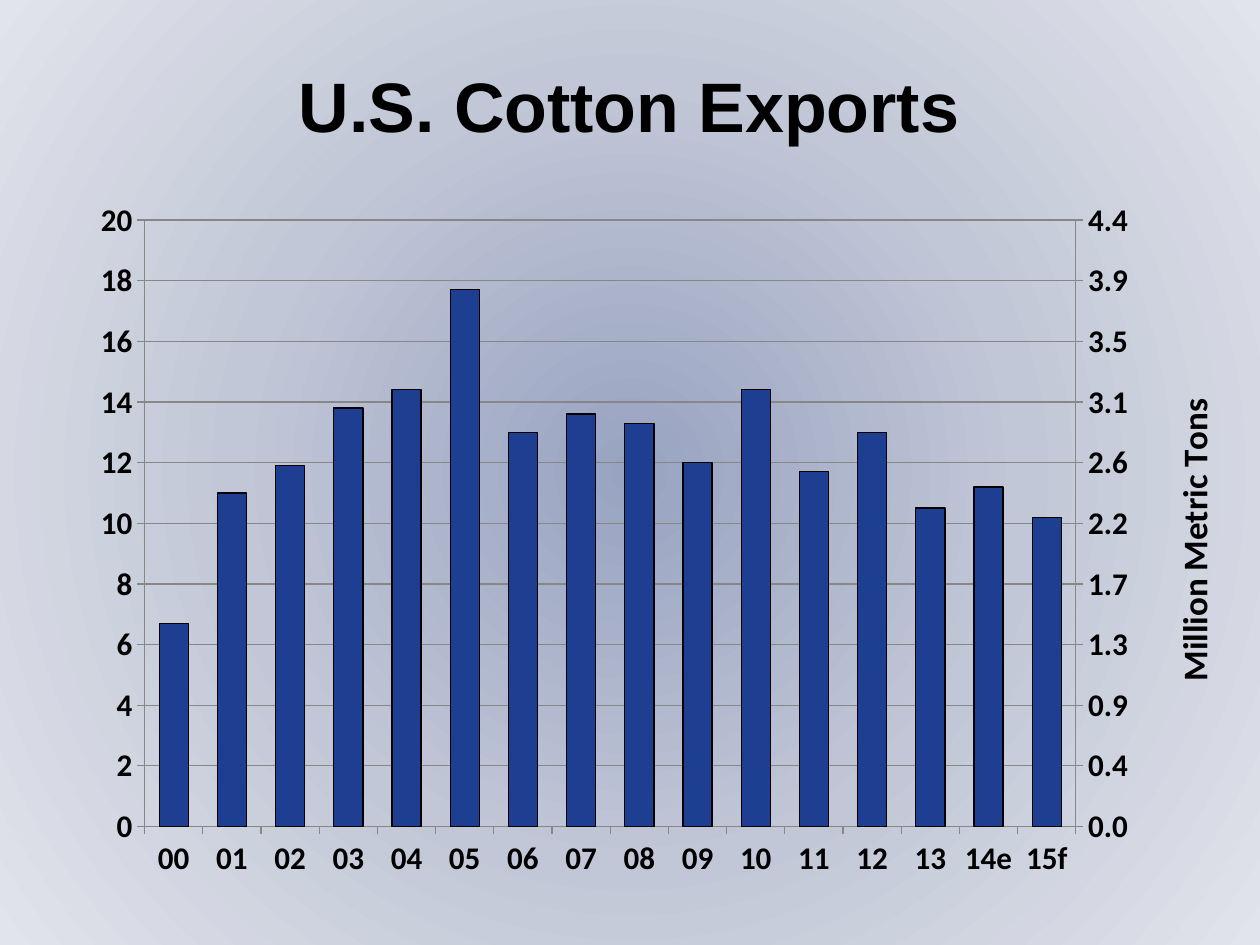
from copy import deepcopy

from pptx import Presentation
from pptx.chart.axis import CategoryAxis, ValueAxis
from pptx.chart.data import CategoryChartData
from pptx.dml.color import RGBColor
from pptx.enum.chart import XL_CHART_TYPE, XL_TICK_LABEL_POSITION, XL_TICK_MARK
from pptx.enum.text import MSO_ANCHOR, PP_ALIGN
from pptx.oxml import parse_xml
from pptx.oxml.ns import nsdecls, qn
from pptx.util import Pt

BLACK = RGBColor(0x00, 0x00, 0x00)
BLUE = RGBColor(0x1E, 0x3E, 0x92)
GRAY = RGBColor(0x87, 0x87, 0x87)
BACKGROUND_STOPS = [
    (0, RGBColor(0x98, 0xA3, 0xC1)),
    (50, RGBColor(0xC2, 0xC7, 0xD7)),
    (100, RGBColor(0xE1, 0xE4, 0xEB)),
]
YEARS = [f"{year:02}" for year in range(14)] + ["14e", "15f"]
BALES = [6.7, 11, 11.9, 13.8, 14.4, 17.7, 13, 13.6, 13.3, 12, 14.4, 11.7, 13, 10.5, 11.2, 10.2]
TONS = [1.5, 2.4, 2.6, 3, 3.1, 3.9, 2.8, 3, 2.9, 2.6, 3.1, 2.6, 2.8, 2.3, 2.5, 2.2]
TONS_MAXIMUM = 4.357298


class SlideBuilder:
    """Holds the style and the current slide, and adds each kind of element."""

    heading_font = "Arial"
    chart_font = "Calibri"

    def __init__(self, slide):
        self.slide = slide

    def style_font(self, font, name, size):
        font.name, font.size, font.bold = name, Pt(size), True
        font.color.rgb = BLACK

    def background(self, stops):
        self.slide.background.fill.gradient()
        gradient = self.slide.element.find(f".//{qn('a:gradFill')}")
        stop_xml = "".join(
            f'<a:gs pos="{position * 1000}"><a:srgbClr val="{color}"/></a:gs>'
            for position, color in stops
        )
        gradient.getparent().replace(gradient, parse_xml(
            f'<a:gradFill {nsdecls("a")} rotWithShape="1"><a:gsLst>{stop_xml}</a:gsLst>'
            '<a:path path="circle"><a:fillToRect l="50000" t="50000" r="50000" b="50000"/>'
            "</a:path></a:gradFill>"
        ))

    def heading(self, text, left, top, width, height):
        shape = self.slide.shapes.add_textbox(Pt(left), Pt(top), Pt(width), Pt(height))
        frame = shape.text_frame
        frame.word_wrap = True
        frame.vertical_anchor = MSO_ANCHOR.MIDDLE
        paragraph = frame.paragraphs[0]
        paragraph.text = text
        paragraph.alignment = PP_ALIGN.CENTER
        self.style_font(paragraph.font, self.heading_font, 40)

    def place(self, element, index, **fractions):
        for layout in element.findall(qn("c:layout")):
            element.remove(layout)
        modes = '<c:xMode val="edge"/><c:yMode val="edge"/>'
        target = '<c:layoutTarget val="inner"/>' if "w" in fractions else ""
        values = "".join(f'<c:{key} val="{value}"/>' for key, value in fractions.items())
        element.insert(index, parse_xml(
            f'<c:layout {nsdecls("c")}><c:manualLayout>{target}{modes}{values}'
            "</c:manualLayout></c:layout>"
        ))

    def axis_line(self, axis):
        axis.major_tick_mark = XL_TICK_MARK.OUTSIDE
        axis.minor_tick_mark = XL_TICK_MARK.NONE
        axis.format.line.color.rgb = GRAY
        axis.format.line.width = Pt(0.75)
        self.style_font(axis.tick_labels.font, self.chart_font, 18)

    def value_axis(self, axis, title, maximum, step, number_format, title_x, title_y):
        self.axis_line(axis)
        axis.minimum_scale, axis.maximum_scale, axis.major_unit = 0, maximum, step
        axis.tick_labels.number_format = number_format
        axis.tick_labels.number_format_is_linked = False
        frame = axis.axis_title.text_frame
        frame.text = title
        self.style_font(frame.paragraphs[0].font, self.chart_font, 20)
        title_element = axis.axis_title._element
        body = title_element.find(f".//{qn('a:bodyPr')}")
        body.set("rot", "-5400000")
        body.set("vert", "horz")
        self.place(title_element, 1, x=title_x, y=title_y)

    def split_to_right_axis(self, chart):
        """Move the second series to its own bars and axes, and return the new value axis."""
        left_bars = chart.plots[0]._element
        left_category, left_value = chart.category_axis._element, chart.value_axis._element
        right_bars, right_category, right_value = map(
            deepcopy, (left_bars, left_category, left_value)
        )
        left_bars.remove(left_bars.findall(qn("c:ser"))[1])
        right_bars.remove(right_bars.findall(qn("c:ser"))[0])
        category_id, value_id = "5001", "5002"
        for element, number in zip(right_bars.findall(qn("c:axId")), (category_id, value_id)):
            element.set("val", number)
        for axis, own, other in (
            (right_category, category_id, value_id),
            (right_value, value_id, category_id),
        ):
            axis.find(qn("c:axId")).set("val", own)
            axis.find(qn("c:crossAx")).set("val", other)
        right_value.find(qn("c:axPos")).set("val", "r")
        right_value.find(qn("c:crosses")).set("val", "max")
        left_bars.addnext(right_bars)
        left_value.addnext(right_value)
        right_value.addnext(right_category)
        CategoryAxis(right_category).visible = False
        return ValueAxis(right_value)

    def export_chart(self, left, top, width, height):
        data = CategoryChartData()
        data.categories = YEARS
        data.add_series("Series 1", BALES)
        data.add_series("Series 2", TONS)
        chart = self.slide.shapes.add_chart(
            XL_CHART_TYPE.COLUMN_CLUSTERED, Pt(left), Pt(top), Pt(width), Pt(height), data
        ).chart
        chart.has_title = chart.has_legend = False
        self.style_font(chart.font, self.chart_font, 18)
        plot = chart.plots[0]
        plot.gap_width, plot.vary_by_categories = 100, False
        bales, tons = plot.series
        bales.format.fill.solid()
        bales.format.fill.fore_color.rgb = BLUE
        bales.format.line.color.rgb = BLACK
        bales.format.line.width = Pt(0.75)
        tons.format.fill.background()
        tons.format.line.fill.background()

        self.axis_line(chart.category_axis)
        chart.category_axis.tick_label_position = XL_TICK_LABEL_POSITION.LOW
        right_axis = self.split_to_right_axis(chart)
        right_axis.has_major_gridlines = False
        left_axis = chart.value_axis
        left_axis.has_major_gridlines = True
        left_axis.major_gridlines.format.line.color.rgb = GRAY
        left_axis.major_gridlines.format.line.width = Pt(0.75)
        self.value_axis(left_axis, "Million Bales", 20, 2, "#,##0", 0.01, 0.39)
        self.value_axis(right_axis, "Million Metric Tons", TONS_MAXIMUM, TONS_MAXIMUM / 10,
                        "#,##0.0", 0.96, 0.32)
        plot_area = plot._element.getparent()
        self.place(plot_area, 0, x=0.096, y=0.097, w=0.79, h=0.804)


def main():
    presentation = Presentation()
    presentation.slide_width, presentation.slide_height = Pt(720), Pt(540)
    slide = presentation.slides.add_slide(presentation.slide_layouts[6])
    builder = SlideBuilder(slide)
    builder.background(BACKGROUND_STOPS)
    builder.heading("U.S. Cotton Exports", 18, 24, 683, 72)
    builder.export_chart(18, 84, 683, 431)
    presentation.save("out.pptx")


if __name__ == "__main__":
    main()
